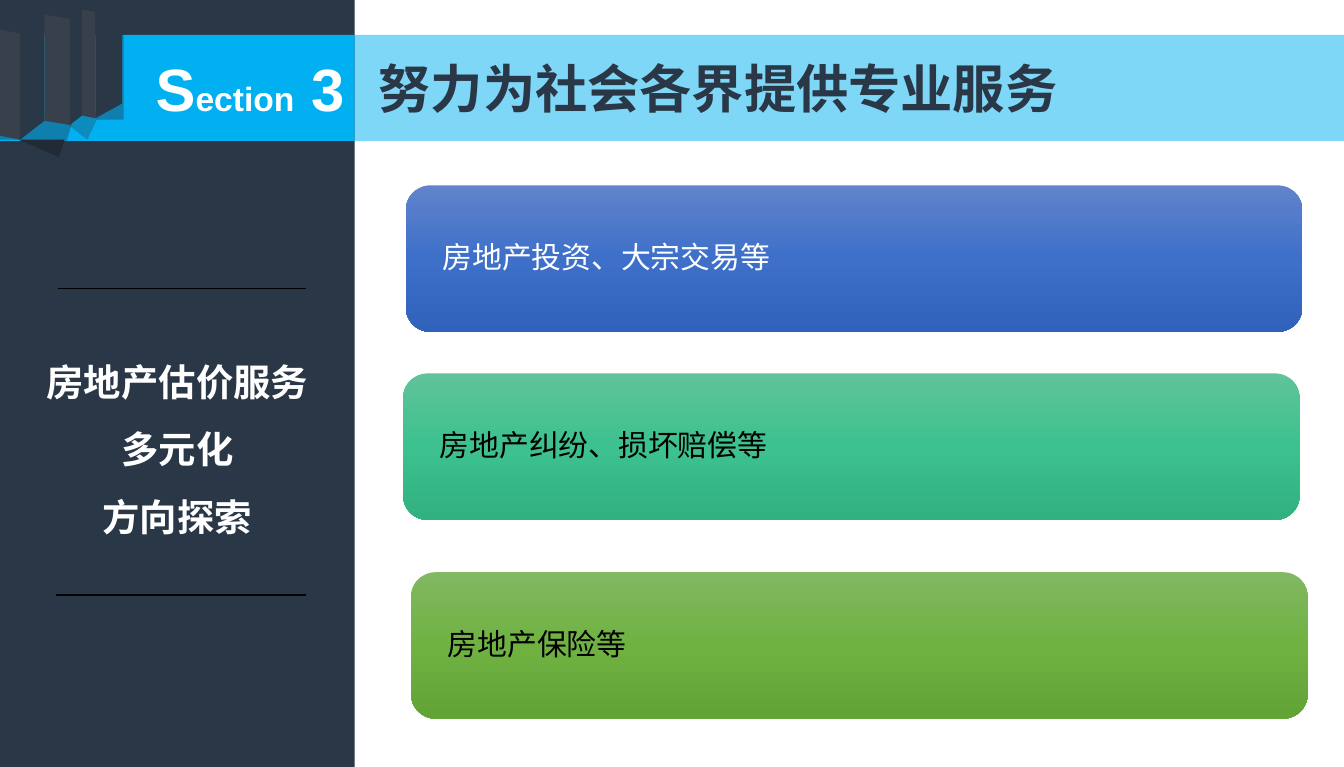
"""Build a section slide with a dark sidebar, a title band and three service cards."""
from lxml.etree import SubElement
from pptx import Presentation
from pptx.dml.color import RGBColor
from pptx.enum.shapes import MSO_CONNECTOR, MSO_SHAPE
from pptx.enum.text import MSO_ANCHOR, PP_ALIGN
from pptx.oxml import parse_xml
from pptx.oxml.ns import nsdecls, qn
from pptx.util import Inches, Pt

NAVY = RGBColor(0x2A, 0x37, 0x47)
SHADE = RGBColor(0x21, 0x2A, 0x37)
GREY = RGBColor(0x38, 0x41, 0x4B)
BLUE = RGBColor(0x01, 0xB0, 0xF1)
WHITE = RGBColor(0xFF, 0xFF, 0xFF)
BLACK = RGBColor(0x00, 0x00, 0x00)
BLUE_STOPS = [RGBColor(0x61, 0x83, 0xCB), RGBColor(0x3E, 0x70, 0xCA), RGBColor(0x30, 0x62, 0xBB)]
TEAL_STOPS = [RGBColor(0x60, 0xC3, 0x9A), RGBColor(0x3D, 0xC1, 0x8E), RGBColor(0x31, 0xB1, 0x80)]
GREEN_STOPS = [RGBColor(0x81, 0xB8, 0x61), RGBColor(0x6F, 0xB2, 0x42), RGBColor(0x62, 0xA3, 0x36)]
CJK = "Noto Sans CJK SC"

FOLDS = [(0, 22), (15, 25), (33, 11), (52, 14), (61, 7), (71, 9), (91, 0)]
PANEL_HEIGHT = 79
CARDS = [
    (3.02, 1.38, "房地产投资、大宗交易等", BLUE_STOPS, WHITE),
    (3.0, 2.78, "房地产纠纷、损坏赔偿等", TEAL_STOPS, BLACK),
    (3.06, 4.26, "房地产保险等", GREEN_STOPS, BLACK),
]


def paint(sp, color, alpha=100):
    sp.shadow.inherit = False
    sp.line.fill.background()
    sp.fill.solid()
    sp.fill.fore_color.rgb = color
    if alpha < 100:
        clr = sp._element.spPr.find(qn("a:solidFill"))[0]
        SubElement(clr, qn("a:alpha")).set("val", str(alpha * 1000))


def add_rect(s, x, y, w, h, color, alpha=100):
    sp = s.shapes.add_shape(MSO_SHAPE.RECTANGLE, Inches(x), Inches(y), Inches(w), Inches(h))
    paint(sp, color, alpha)


def add_polygon(s, points, color, alpha=100):
    """Draw a closed outline whose points are in hundredths of an inch."""
    fb = s.shapes.build_freeform(*points[0], scale=Inches(0.01))
    fb.add_line_segments(points[1:], close=True)
    paint(fb.convert_to_shape(), color, alpha)


def add_rule(s, x1, x2, y):
    cn = s.shapes.add_connector(MSO_CONNECTOR.STRAIGHT, Inches(x1), Inches(y), Inches(x2), Inches(y))
    cn.line.color.rgb = BLACK
    cn.line.width = Pt(0.75)
    SubElement(cn._element.spPr, qn("a:effectLst"))


def add_folded_paper(s):
    add_rect(s, 0.72, 0.1, 0.2, 0.79, NAVY, 40)
    add_polygon(s, [(38, 83), (75, 83), (65, 104)], NAVY, 30)
    add_polygon(s, [(0, 87), (55, 87), (46, 117), (15, 104), (0, 104)], NAVY, 40)
    for i, ((x1, y1), (x2, y2)) in enumerate(zip(FOLDS, FOLDS[1:])):
        bottom1 = y1 + PANEL_HEIGHT
        bottom2 = 77 if y2 == 0 else y2 + PANEL_HEIGHT
        points = [(x1, y1), (x2, y2), (x2, bottom2), (x1, bottom1)]
        add_polygon(s, points, NAVY if i % 2 else GREY)
    add_polygon(s, [(14, 104), (48, 104), (44, 117)], SHADE)


def style_font(font, size, color, name=CJK, bold=False):
    font.size = Pt(size)
    font.bold = bold
    font.name = name
    font.color.rgb = color


def add_run(p, text, name=CJK):
    r = p.add_run()
    r.text = text
    SubElement(r._r.get_or_add_rPr(), qn("a:ea")).set("typeface", name)
    return r


def add_textbox(s, x, y, w, h):
    tf = s.shapes.add_textbox(Inches(x), Inches(y), Inches(w), Inches(h)).text_frame
    tf.word_wrap = True
    return tf


def add_sidebar_text(s, lines):
    tf = add_textbox(s, 0, 2.46, 2.64, 1.56)
    for i, line in enumerate(lines):
        p = tf.paragraphs[0] if i == 0 else tf.add_paragraph()
        p.alignment = PP_ALIGN.CENTER
        p.line_spacing = 1.5
        style_font(p.font, 20, WHITE, bold=True)
        add_run(p, line)


def add_section_label(s):
    p = add_textbox(s, 1.06, 0.34, 2.6, 0.64).paragraphs[0]
    style_font(p.font, 32, WHITE, "Arial", True)
    for text, size in (("S", 32), ("ection", 18), (" 3", 32)):
        add_run(p, text, "Arial").font.size = Pt(size)


def add_title(s, text):
    p = add_textbox(s, 2.72, 0.37, 7.28, 0.57).paragraphs[0]
    style_font(p.font, 28, NAVY, bold=True)
    add_run(p, text)


def add_card(s, x, y, text, stops, color):
    sp = s.shapes.add_shape(MSO_SHAPE.ROUNDED_RECTANGLE, Inches(x), Inches(y), Inches(6.67), Inches(1.09))
    sp.shadow.inherit = False
    sp.line.fill.background()
    gs = "".join(
        f'<a:gs pos="{i * 50000}"><a:srgbClr val="{c}"/></a:gs>' for i, c in enumerate(stops)
    )
    sp._element.spPr.find(qn("a:prstGeom")).addnext(parse_xml(
        f'<a:gradFill {nsdecls("a")} rotWithShape="1"><a:gsLst>{gs}</a:gsLst>'
        '<a:lin ang="5400000" scaled="0"/></a:gradFill>'
    ))
    tf = sp.text_frame
    tf.word_wrap = True
    tf.vertical_anchor = MSO_ANCHOR.MIDDLE
    tf.margin_left = Inches(0.22)
    p = tf.paragraphs[0]
    p.alignment = PP_ALIGN.LEFT
    p.line_spacing = 0.9
    style_font(p.font, 16, color)
    add_run(p, text)


def main():
    prs = Presentation()
    prs.slide_width, prs.slide_height = Inches(10), Inches(5.71)
    s = prs.slides.add_slide(prs.slide_layouts[6])
    add_rect(s, 0, 0, 2.64, 5.71, NAVY)
    add_rect(s, 0, 0.26, 2.64, 0.79, BLUE)
    add_rect(s, 2.64, 0.26, 7.36, 0.79, BLUE, 50)
    add_folded_paper(s)
    add_rule(s, 0.43, 2.28, 2.15)
    add_rule(s, 0.42, 2.28, 4.43)
    add_sidebar_text(s, ["房地产估价服务", "多元化", "方向探索"])
    add_section_label(s)
    add_title(s, "努力为社会各界提供专业服务")
    for card in CARDS:
        add_card(s, *card)
    prs.save("out.pptx")


if __name__ == "__main__":
    main()
